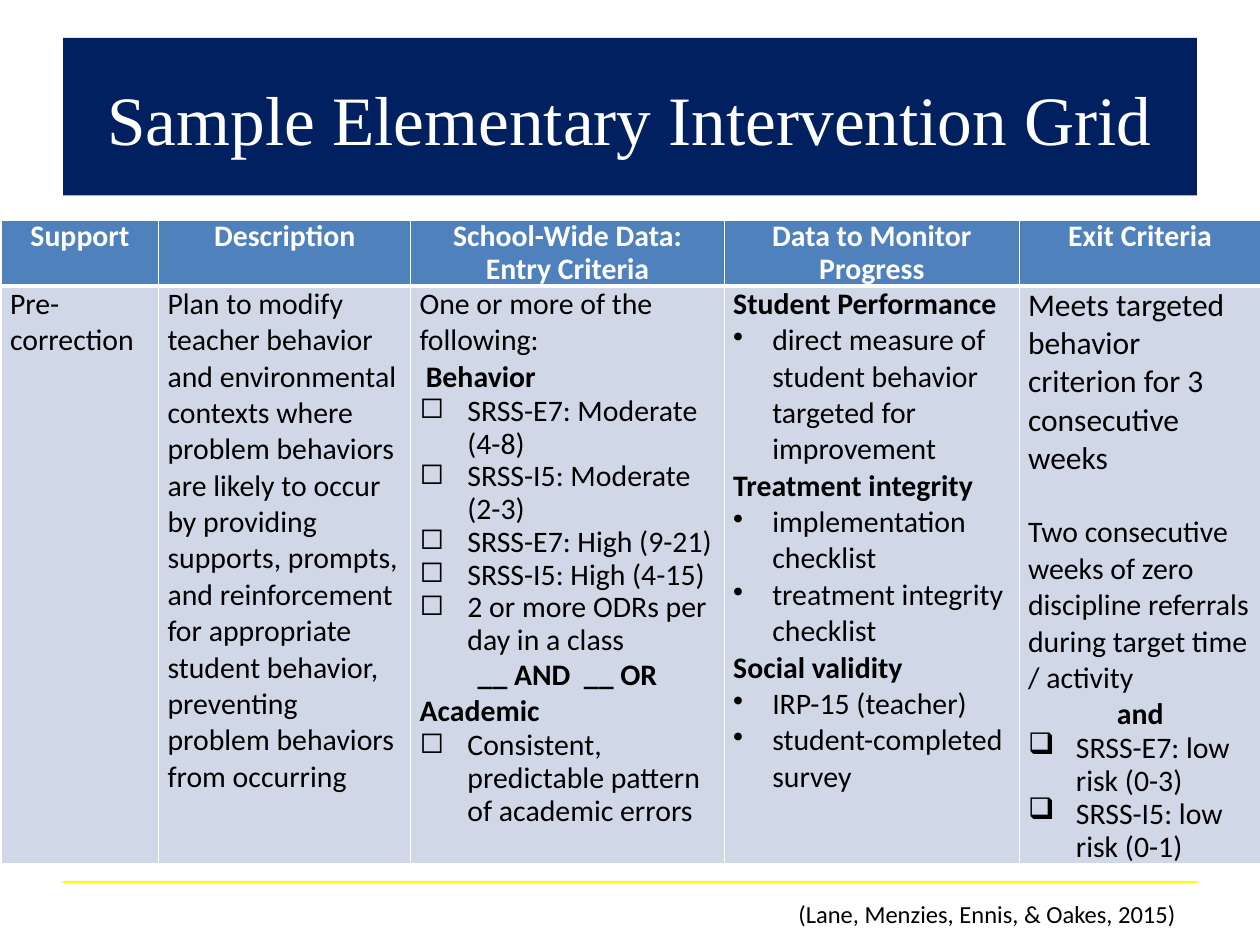
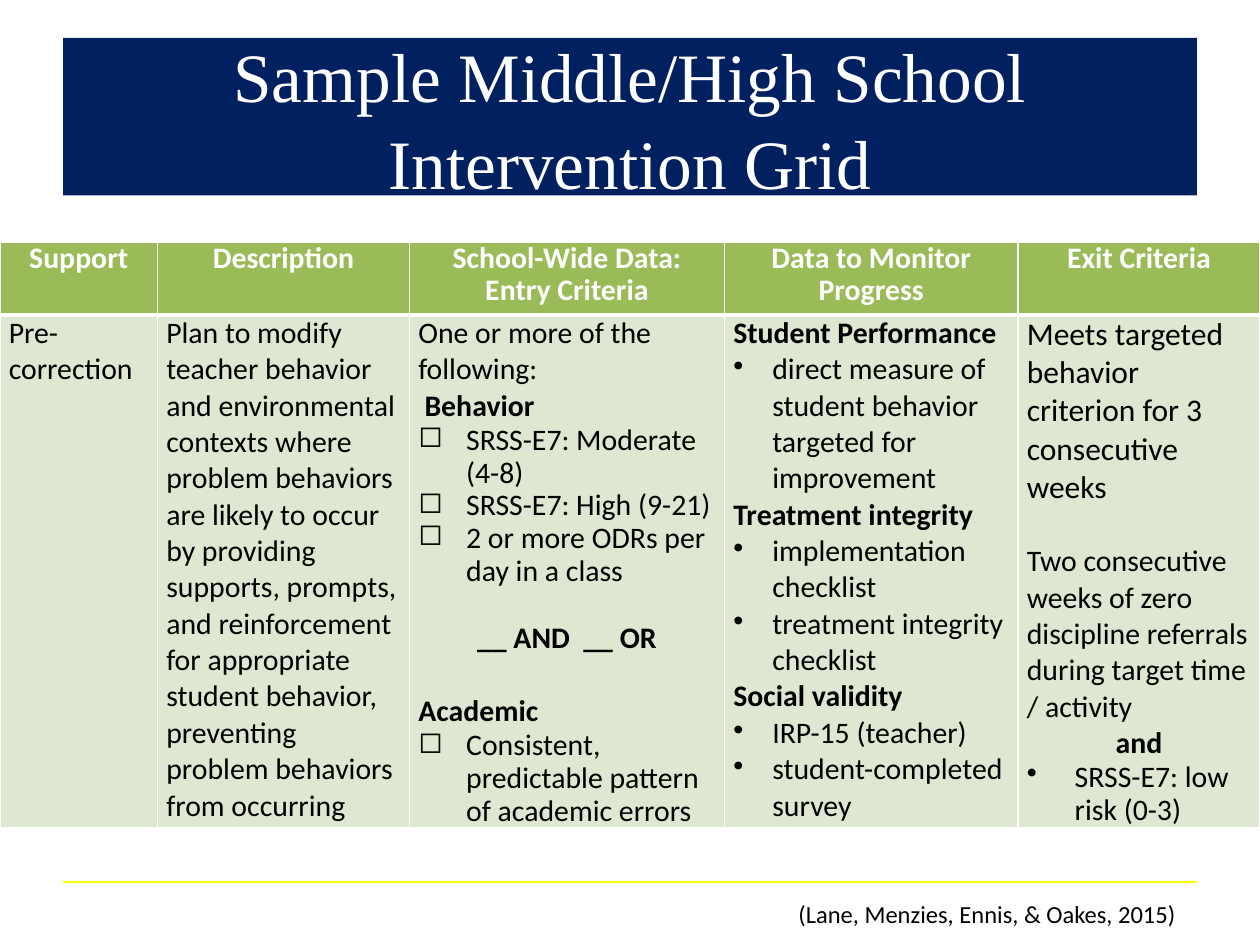
from lxml import etree
from pptx import Presentation
from pptx.dml.color import RGBColor
from pptx.enum.shapes import MSO_CONNECTOR
from pptx.enum.text import MSO_ANCHOR, MSO_AUTO_SIZE, PP_ALIGN
from pptx.oxml.ns import qn
from pptx.util import Inches, Pt

LEFT, MID = PP_ALIGN.LEFT, PP_ALIGN.CENTER
MIDDLE = MSO_ANCHOR.MIDDLE
NO_FIT = MSO_AUTO_SIZE.NONE
STRAIGHT = MSO_CONNECTOR.STRAIGHT

NAVY = RGBColor(0x00, 0x20, 0x60)
WHITE = RGBColor(0xFF, 0xFF, 0xFF)
BLACK = RGBColor(0x00, 0x00, 0x00)
YELLOW = RGBColor(0xFF, 0xFF, 0x00)
BLUE = RGBColor(0x4F, 0x81, 0xBD)
PALE_BLUE = RGBColor(0xD0, 0xD8, 0xE8)
GREEN = RGBColor(0x9B, 0xBB, 0x59)
PALE_GREEN = RGBColor(0xDE, 0xE7, 0xD1)

# Paragraph styles used in the grid cells
BASE = {"size": 17, "bold": False, "color": BLACK, "align": LEFT,
        "line": 1.0, "before": 0, "indent": 0, "bullet": None}
GAP = 20.75  # height of one line of text, in points
STYLES = {
    "top": {"bold": True, "color": WHITE, "align": MID, "line": 0.9},
    "text": {},
    "big": {"size": 18},
    "next": {"before": GAP},
    "head": {"bold": True},
    "inset": {"bold": True, "indent": 0.05},
    "apart": {"bold": True, "before": GAP},
    "join": {"bold": True, "align": MID},
    "lone": {"bold": True, "align": MID, "before": 0.9 * GAP},
    "dot": {"indent": 0.31, "bullet": "•"},
    "point": {"indent": 0.38, "bullet": "•", "line": 0.9},
    "box": {"indent": 0.38, "bullet": "◻", "line": 0.9},
    "check": {"indent": 0.38, "bullet": "❑", "line": 0.9},
}

# Text that both grids share
HEADS = [
    [("top", "Support")],
    [("top", "Description")],
    [("top", "School-Wide Data:"), ("top", "Entry Criteria")],
    [("top", "Data to Monitor Progress")],
    [("top", "Exit Criteria")],
]
NAME = [("text", "Pre-correction")]
ABOUT = [("text", "Plan to modify teacher behavior and environmental contexts "
          "where problem behaviors are likely to occur by providing supports, "
          "prompts, and reinforcement for appropriate student behavior, "
          "preventing problem behaviors from occurring")]
ENTRY = [("text", "One or more of the following:"), ("inset", "Behavior"),
         ("box", "SRSS-E7: Moderate (4-8)")]
ODRS = ("box", "2 or more ODRs per day in a class")
HIGH = ("box", "SRSS-E7: High (9-21)")
CHOICE = "__ AND  __ OR"
ERRORS = ("box", "Consistent, predictable pattern of academic errors")
WATCH = [
    ("head", "Student Performance"),
    ("dot", "direct measure of student behavior targeted for improvement"),
    ("head", "Treatment integrity"),
    ("dot", "implementation checklist"),
    ("dot", "treatment integrity checklist"),
    ("head", "Social validity"),
    ("dot", "IRP-15 (teacher)"),
    ("dot", "student-completed survey"),
]
LEAVE = [
    ("big", "Meets targeted behavior criterion for 3 consecutive weeks"),
    ("next", "Two consecutive weeks of zero discipline referrals during "
     "target time / activity"),
    ("join", "and"),
]
LOW = "SRSS-E7: low risk (0-3)"

GRIDS = [
    {"title": "Sample Elementary Intervention Grid",
     "left": 0.01, "top": 1.75, "rows": [0.52, 4.49],
     "cols": [1.25, 2, 2.49, 2.34, 1.92],
     "dark": BLUE, "pale": PALE_BLUE,
     "entry": ENTRY + [("box", "SRSS-I5: Moderate (2-3)"), HIGH,
                       ("box", "SRSS-I5: High (4-15)"), ODRS,
                       ("join", CHOICE), ("head", "Academic"), ERRORS],
     "exit": LEAVE + [("check", LOW), ("check", "SRSS-I5: low risk (0-1)")]},
    {"title": "Sample Middle/High School Intervention Grid",
     "left": 0, "top": 1.92, "rows": [0.58, 3.99],
     "cols": [1.25, 2, 2.5, 2.33, 1.92],
     "dark": GREEN, "pale": PALE_GREEN,
     "entry": ENTRY + [HIGH, ODRS, ("lone", CHOICE),
                       ("apart", "Academic"), ERRORS],
     "exit": LEAVE + [("point", LOW)]},
]


def put(frame, lines):
    """Write styled lines into the text frame of a cell."""
    for i, (kind, text) in enumerate(lines):
        look = {**BASE, **STYLES[kind]}
        para = frame.paragraphs[0] if i == 0 else frame.add_paragraph()
        props = para._p.get_or_add_pPr()
        if look["indent"]:
            props.set("marL", str(Inches(look["indent"])))
        if look["bullet"]:
            props.set("indent", str(-Inches(look["indent"])))
            mark = etree.SubElement(props, qn("a:buChar"))
            mark.set("char", look["bullet"])
        para.alignment = look["align"]
        para.line_spacing = look["line"]
        para.space_before = Pt(look["before"])
        run = para.add_run()
        run.text = text
        run.font.name = "Calibri"
        run.font.size = Pt(look["size"])
        run.font.bold = look["bold"]
        run.font.color.rgb = look["color"]


def edge(cell, sides):
    """Draw white cell borders; sides maps a tag to a width in points."""
    props = cell._tc.get_or_add_tcPr()
    for i, (tag, width) in enumerate(sides.items()):
        line = etree.Element(qn("a:" + tag), w=str(Pt(width)))
        fill = etree.SubElement(line, qn("a:solidFill"))
        etree.SubElement(fill, qn("a:srgbClr"), val=str(WHITE))
        props.insert(i, line)


deck = Presentation()
deck.slide_width, deck.slide_height = Inches(10), Inches(7.5)

for grid in GRIDS:
    slide = deck.slides.add_slide(deck.slide_layouts[5])
    shapes = slide.shapes

    # Yellow rule above the source
    rule = shapes.add_connector(STRAIGHT, Inches(0.5), Inches(7),
                                Inches(9.5), Inches(7))
    rule.line.color.rgb = YELLOW
    rule.line.width = Pt(0.75)
    etree.SubElement(rule._element.spPr, qn("a:effectLst"))

    # Source
    cite = shapes.add_textbox(Inches(5.67), Inches(7), Inches(4.33), Inches(0.5))
    cite.text_frame.text = "(Lane, Menzies, Ennis, & Oakes, 2015)"

    # Title band
    title = shapes.title
    title.left, title.top = Inches(0.5), Inches(0.3)
    title.width, title.height = Inches(9), Inches(1.25)
    title.fill.solid()
    title.fill.fore_color.rgb = NAVY
    title.text_frame.text = grid["title"]
    title.text_frame.paragraphs[0].line_spacing = 1.04

    for shape, face, size, color in [(cite, "Calibri", 14, BLACK),
                                     (title, "Times New Roman", 39.6, WHITE)]:
        frame = shape.text_frame
        frame.word_wrap = True
        frame.auto_size = NO_FIT
        frame.vertical_anchor = MIDDLE
        para = frame.paragraphs[0]
        para.alignment = MID
        font = para.runs[0].font
        font.name, font.size = face, Pt(size)
        font.color.rgb = color

    # Intervention grid
    cols, rows = grid["cols"], grid["rows"]
    table = shapes.add_table(len(rows), len(cols), Inches(grid["left"]),
                             Inches(grid["top"]), Inches(sum(cols)),
                             Inches(sum(rows))).table
    for col, width in zip(table.columns, cols):
        col.width = Inches(width)
    for row, height in zip(table.rows, rows):
        row.height = Inches(height)

    body = [NAME, ABOUT, grid["entry"], WATCH, grid["exit"]]
    for r, (texts, fill) in enumerate([(HEADS, grid["dark"]),
                                       (body, grid["pale"])]):
        for c, lines in enumerate(texts):
            cell = table.cell(r, c)
            cell.margin_left = cell.margin_right = Inches(0.07)
            cell.margin_top = cell.margin_bottom = 0
            cell.fill.solid()
            cell.fill.fore_color.rgb = fill
            edge(cell, {"lnL": 1, "lnR": 1, "lnT": 3 if r else 1,
                        "lnB": 1 if r else 3})
            put(cell.text_frame, lines)

deck.save("out.pptx")
